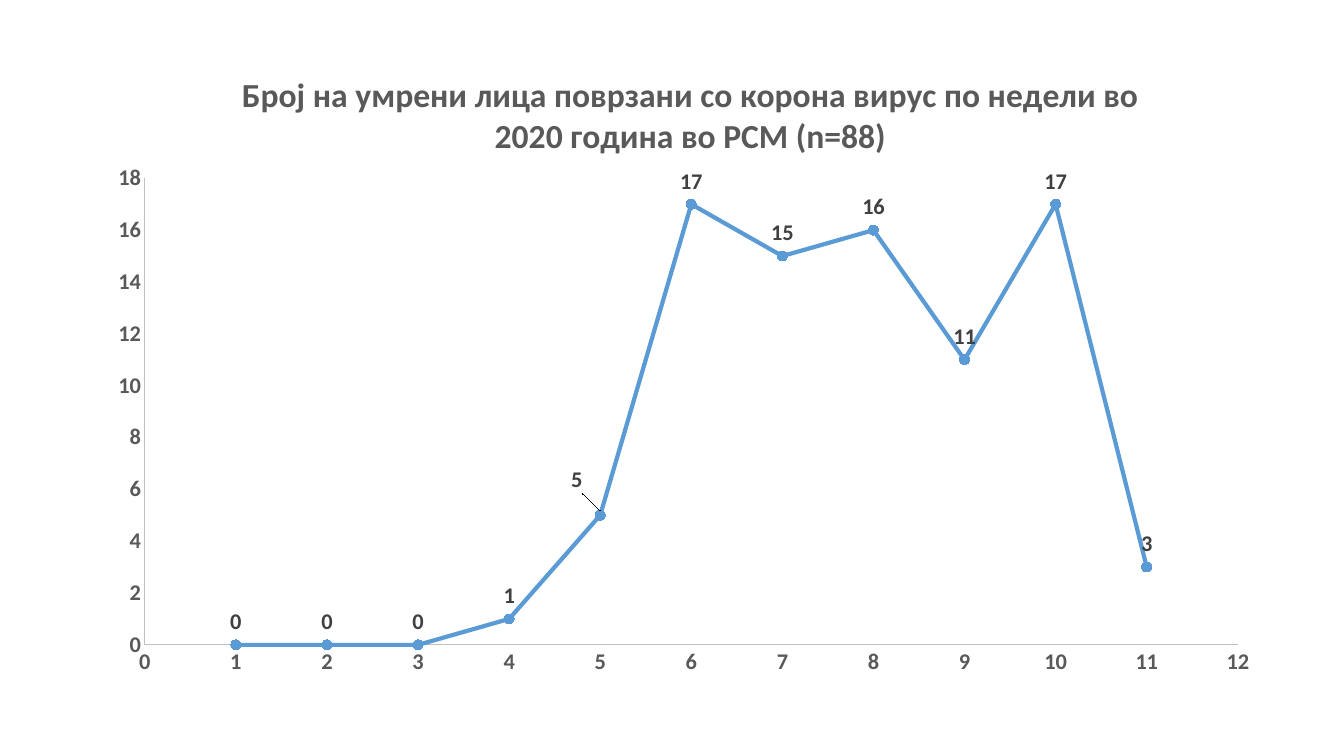
from dataclasses import dataclass

from lxml import etree
from pptx import Presentation
from pptx import util as u
from pptx.chart.data import XyChartData
from pptx.chart.datalabel import DataLabels
from pptx.dml.color import RGBColor
from pptx.enum import chart as ch
from pptx.oxml import ns

COLORS = {"line": "5B9BD5", "text": "595959", "label": "404040", "axis": "BFBFBF"}
FONT = "Calibri"
TITLE = "Број на умрени лица поврзани со корона вирус по недели во 2020 година во РСМ (n=88)"
DEATHS_BY_WEEK = [0, 0, 0, 1, 5, 17, 15, 16, 11, 17, 3]
SLIDE_W, SLIDE_H = u.Inches(13.33), u.Inches(7.5)


@dataclass
class AxisScale:
    maximum: int
    step: int


@dataclass
class Box:
    """A place in percent of the surrounding width and height."""
    x: float
    y: float
    w: float
    h: float


CHART_BOX = Box(7.05, 5.33, 87.55, 85.73)
PLOT_BOX = Box(4.25, 21.3, 92.9, 72)


def rgb(name: str) -> RGBColor:
    return RGBColor.from_string(COLORS[name])


def set_font(font, size: int, color: str) -> None:
    font.name, font.size, font.bold = FONT, u.Pt(size), True
    font.color.rgb = rgb(color)


def set_layout(parent, index: int, **settings) -> None:
    """Give a chart part a manual layout; lengths are shares of the chart."""
    for old in parent.findall(ns.qn("c:layout")):
        parent.remove(old)
    layout = etree.Element(ns.qn("c:layout"))
    manual = etree.SubElement(layout, ns.qn("c:manualLayout"))
    for tag, value in settings.items():
        etree.SubElement(manual, ns.qn(f"c:{tag}")).set("val", str(value))
    parent.insert(index, layout)


def style_axis(axis, scale: AxisScale) -> None:
    axis.minimum_scale, axis.maximum_scale = 0, scale.maximum
    axis.major_unit = scale.step
    axis.has_major_gridlines = False
    axis.major_tick_mark = axis.minor_tick_mark = ch.XL_TICK_MARK.NONE
    axis.format.line.color.rgb = rgb("axis")
    axis.format.line.width = u.Pt(0.75)
    set_font(axis.tick_labels.font, 16, "text")


def style_series(series) -> None:
    series.smooth = False
    series.format.line.color.rgb = rgb("line")
    series.format.line.width = u.Pt(3)
    marker = series.marker
    marker.style, marker.size = ch.XL_MARKER_STYLE.CIRCLE, 7
    marker.format.fill.solid()
    marker.format.fill.fore_color.rgb = rgb("line")
    marker.format.line.color.rgb = rgb("line")

    # Value labels, with the one for week 5 moved off the line
    d_lbls = series._element.get_or_add_dLbls()
    labels = DataLabels(d_lbls)
    labels.show_value = True
    moved = series.points[4].data_label
    for label in (labels, moved):
        set_font(label.font, 16, "label")
        label.position = ch.XL_LABEL_POSITION.ABOVE
    set_layout(d_lbls.find(ns.qn("c:dLbl")), 1, x=-0.02, y=-0.02)


def add_deaths_chart(s) -> None:
    data = XyChartData()
    weekly = data.add_series("Series 1")
    for week, deaths in enumerate(DEATHS_BY_WEEK, start=1):
        weekly.add_data_point(week, deaths)
    chart = s.shapes.add_chart(
        ch.XL_CHART_TYPE.XY_SCATTER_LINES,
        int(SLIDE_W * CHART_BOX.x / 100), int(SLIDE_H * CHART_BOX.y / 100),
        int(SLIDE_W * CHART_BOX.w / 100), int(SLIDE_H * CHART_BOX.h / 100),
        data).chart
    chart.has_legend = False
    chart.font.name, chart.font.size = FONT, u.Pt(24)
    chart.plots[0].vary_by_categories = False

    # Title
    chart.has_title = True
    title = chart.chart_title
    title.text_frame.text = TITLE
    set_font(title.text_frame.paragraphs[0].runs[0].font, 24, "text")
    title.include_in_layout = False
    set_layout(title._element, 1, xMode="edge", yMode="edge", x=0.12, y=0.04)

    # Axes, series and plot area
    style_axis(chart.category_axis, AxisScale(12, 1))
    style_axis(chart.value_axis, AxisScale(18, 2))
    style_series(chart.plots[0].series[0])
    set_layout(chart._chartSpace.chart.plotArea, 0,
               layoutTarget="inner", xMode="edge", yMode="edge",
               x=PLOT_BOX.x / 100, y=PLOT_BOX.y / 100,
               w=PLOT_BOX.w / 100, h=PLOT_BOX.h / 100)


def main() -> None:
    prs = Presentation()
    prs.slide_width, prs.slide_height = SLIDE_W, SLIDE_H
    s = prs.slides.add_slide(prs.slide_layouts[6])
    add_deaths_chart(s)
    prs.save("out.pptx")


if __name__ == "__main__":
    main()
